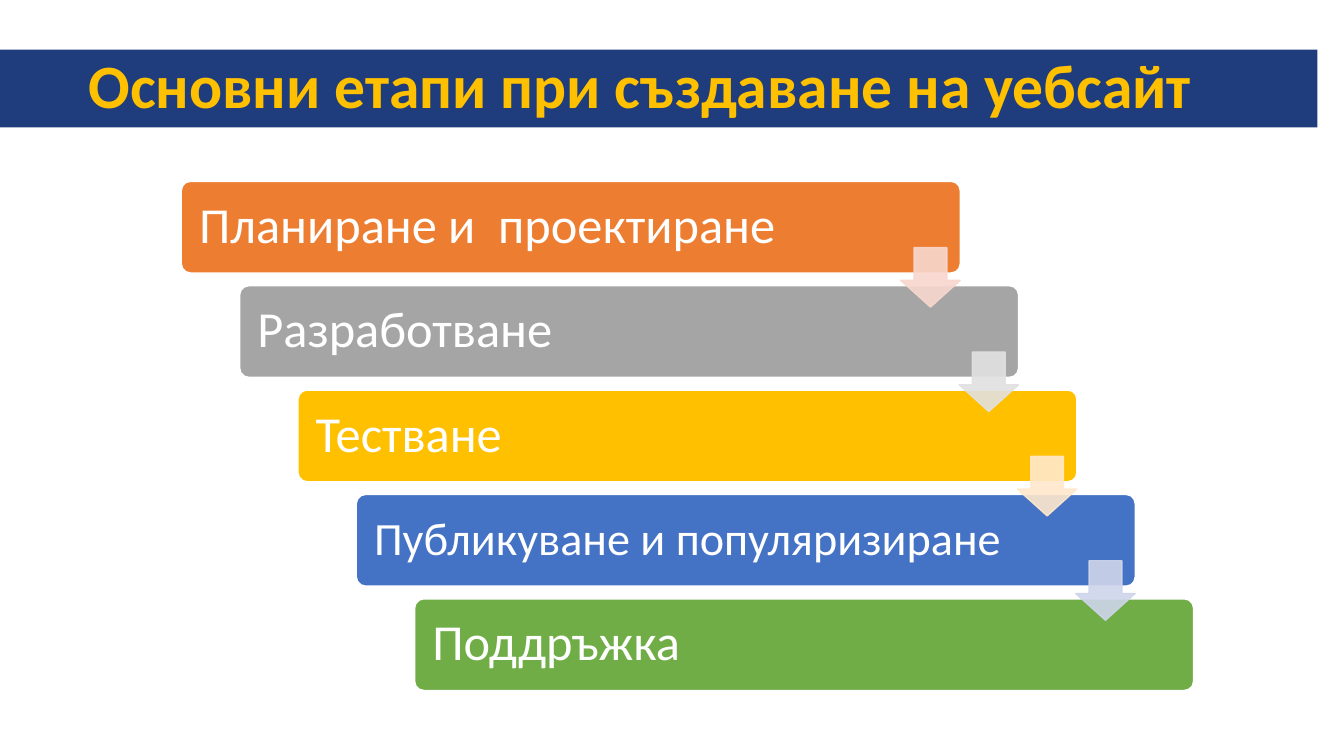
from lxml import etree
from pptx import Presentation
from pptx import util as u
from pptx.dml import color
from pptx.enum import shapes, text
from pptx.oxml import ns

COLORS = {
    "navy": "1F3D7C",
    "gold": "FFC000",
    "white": "FFFFFF",
    "orange": "ED7D31",
    "gray": "A5A5A5",
    "blue": "4472C4",
    "green": "70AD47",
    "pale orange": "F8D7CE",
    "pale gray": "E1E1E1",
    "pale gold": "FFE8CC",
    "pale blue": "CFD5EA",
}

STAGES = [
    ("Планиране и  проектиране", 36, "orange", "pale orange"),
    ("Разработване", 36, "gray", "pale gray"),
    ("Тестване", 36, "gold", "pale gold"),
    ("Публикуване и популяризиране", 33, "blue", "pale blue"),
    ("Поддръжка", 36, "green", None),
]

FIRST_LEFT, FIRST_TOP = 4.57, 4.57
STEP_RIGHT, STEP_DOWN = 1.47, 2.63
STAGE_WIDTH, STAGE_HEIGHT = 19.63, 2.31
ARROW_SIZE, ARROW_DROP = 1.5, 1.67


def rgb(name):
    return color.RGBColor.from_string(COLORS[name])


def set_attributes(target, values):
    for name, value in values.items():
        setattr(target, name, value)


def place(shape, left, top, width, height):
    set_attributes(shape, {
        "left": u.Cm(left),
        "top": u.Cm(top),
        "width": u.Cm(width),
        "height": u.Cm(height),
    })


def write(shape, words, size, color_name, bold=False, inset=0.25):
    frame = shape.text_frame
    frame.text = words
    set_attributes(frame, {
        "word_wrap": True,
        "auto_size": text.MSO_AUTO_SIZE.NONE,
        "vertical_anchor": text.MSO_ANCHOR.MIDDLE,
        "margin_left": u.Cm(inset),
        "margin_right": u.Cm(inset),
    })
    paragraph = frame.paragraphs[0]
    set_attributes(paragraph, {
        "alignment": text.PP_ALIGN.LEFT,
        "line_spacing": 0.9,
    })
    font = paragraph.runs[0].font
    set_attributes(font, {"name": "Calibri", "size": u.Pt(size), "bold": bold})
    font.color.rgb = rgb(color_name)
    return paragraph


def paint(shape, fill_name, line_name):
    shape.shadow.inherit = False
    shape.fill.solid()
    shape.fill.fore_color.rgb = rgb(fill_name)
    shape.line.color.rgb = rgb(line_name)
    shape.line.width = u.Pt(1)


def make_translucent(shape, percent):
    for element in shape._element.spPr.iter(ns.qn("a:srgbClr")):
        alpha = etree.SubElement(element, ns.qn("a:alpha"))
        alpha.set("val", str(percent * 1000))


def add_title(slide, words):
    title = slide.shapes.title
    place(title, 0, 1.25, 33.2, 1.96)
    title.fill.solid()
    title.fill.fore_color.rgb = rgb("navy")
    paragraph = write(title, words, 44, "gold", bold=True)
    properties = paragraph._p.get_or_add_pPr()
    properties.set("marL", str(u.Cm(1.98)))
    properties.set("indent", "0")


def add_preset(slide, kind, adjustments, left, top, width, height):
    shape = slide.shapes.add_shape(
        kind, u.Cm(left), u.Cm(top), u.Cm(width), u.Cm(height))
    for index, value in enumerate(adjustments):
        shape.adjustments[index] = value
    return shape


def add_stage(slide, left, top, words, size, fill_name):
    stage = add_preset(slide, shapes.MSO_SHAPE.ROUNDED_RECTANGLE, [0.1],
                       left, top, STAGE_WIDTH, STAGE_HEIGHT)
    paint(stage, fill_name, "white")
    write(stage, words, size, "white", inset=0.38)


def add_arrow(slide, stage_left, stage_top, fill_name):
    arrow = add_preset(slide, shapes.MSO_SHAPE.DOWN_ARROW, [0.55, 0.45],
                       stage_left + STAGE_WIDTH - ARROW_SIZE,
                       stage_top + ARROW_DROP, ARROW_SIZE, ARROW_SIZE)
    paint(arrow, fill_name, fill_name)
    make_translucent(arrow, 90)


def main():
    presentation = Presentation()
    presentation.slide_width = u.Cm(33.87)
    presentation.slide_height = u.Cm(19.05)
    slide = presentation.slides.add_slide(presentation.slide_layouts[5])

    add_title(slide, "Основни етапи при създаване на уебсайт")
    corners = [(FIRST_LEFT + i * STEP_RIGHT, FIRST_TOP + i * STEP_DOWN)
               for i in range(len(STAGES))]
    for (left, top), (words, size, fill_name, _) in zip(corners, STAGES):
        add_stage(slide, left, top, words, size, fill_name)
    for (left, top), (_, _, _, arrow_name) in zip(corners, STAGES):
        if arrow_name:
            add_arrow(slide, left, top, arrow_name)

    presentation.save("out.pptx")


if __name__ == "__main__":
    main()
